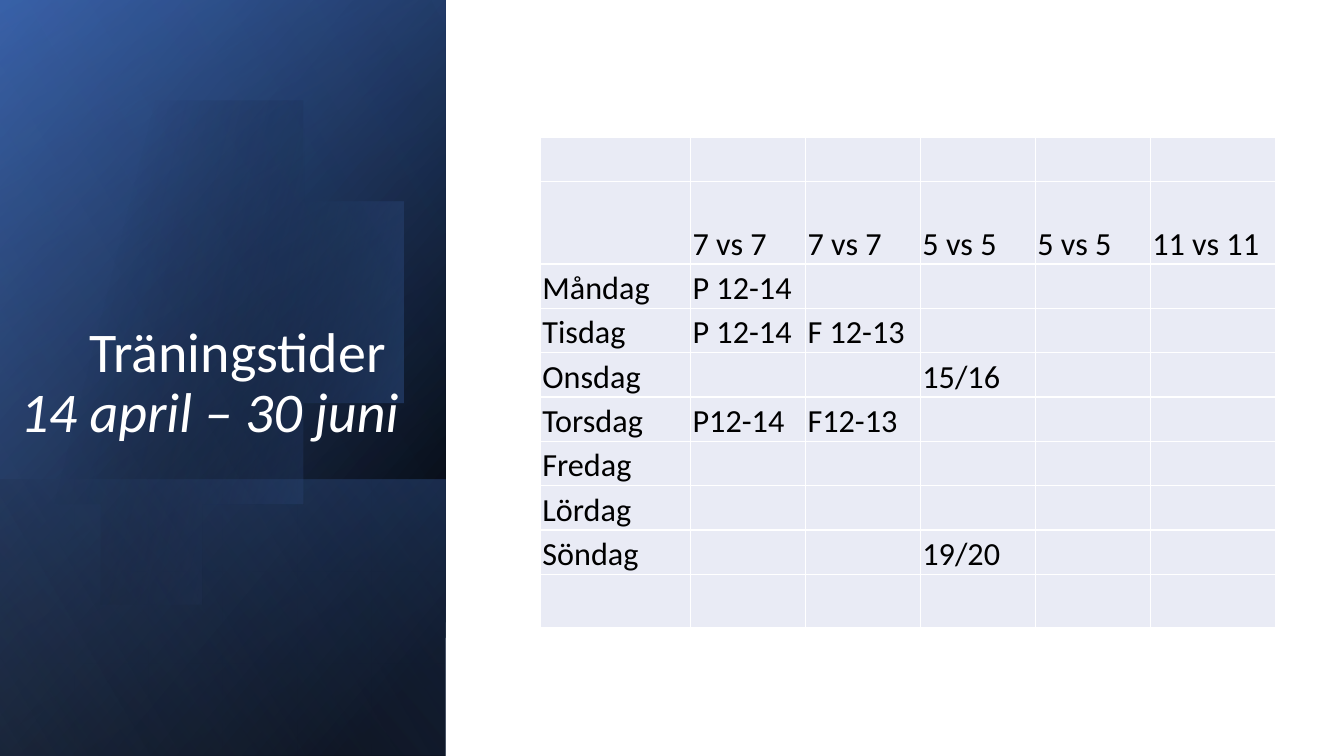
import math
from dataclasses import dataclass

from lxml import etree
from pptx import Presentation
from pptx import util as u
from pptx.dml.color import RGBColor
from pptx.enum import shapes, text
from pptx.oxml.ns import qn

SLIDE_W, SLIDE_H = 13.33, 7.5
PANEL_W = 4.42
FONT = "Calibri"
WHITE, BLACK, CELL_FILL = "FFFFFF", "000000", "E9EBF5"

TABLE_LEFT, TABLE_TOP = 5.36, 1.36
COLUMNS = [1.49] + [1.14] * 4 + [1.24]
ROWS = [0.44, 0.82] + [0.44] * 7 + [0.53]
SCHEDULE = [
    [],
    ["", "7 vs 7", "7 vs 7", "5 vs 5", "5 vs 5", "11 vs 11"],
    ["Måndag", "P 12-14"],
    ["Tisdag", "P 12-14", "F 12-13"],
    ["Onsdag", "", "", "15/16"],
    ["Torsdag", "P12-14", "F12-13"],
    ["Fredag"],
    ["Lördag"],
    ["Söndag", "", "", "19/20"],
    [],
]


@dataclass
class Stop:
    position: int
    color: str
    opacity: int = 100


@dataclass
class Gradient:
    angle: int
    stops: list[Stop]


@dataclass
class Layer:
    """A full-width layer of the side panel, reaching down to the slide's foot."""
    height: float
    gradient: Gradient


BASE_LAYERS = [
    Layer(SLIDE_H, Gradient(50, [Stop(8, BLACK), Stop(100, "2F5597")])),
    Layer(SLIDE_H, Gradient(30, [Stop(0, BLACK, 0), Stop(99, "4472C4", 46)])),
    Layer(2.74, Gradient(130, [Stop(2, "4472C4", 29), Stop(100, BLACK, 30)])),
]
DISC_GRADIENT = Gradient(14, [Stop(29, BLACK, 0), Stop(100, "4472C4", 43)])
TOP_LAYER = Layer(SLIDE_H, Gradient(120, [Stop(0, BLACK, 0), Stop(99, "8FAADC", 11)]))


def rgb(color: str) -> RGBColor:
    return RGBColor.from_string(color)


def add_color(parent, color: str, opacity: int = 100) -> None:
    clr = etree.SubElement(parent, qn("a:srgbClr"), val=color)
    if opacity < 100:
        etree.SubElement(clr, qn("a:alpha"), val=str(opacity * 1000))


def paint(sp, gradient: Gradient) -> None:
    """Give a shape a linear gradient with opacity, no line and no shadow."""
    sp.shadow.inherit = False
    sp.line.fill.background()
    sp.fill.gradient()
    grad = sp._element.spPr.find(qn("a:gradFill"))
    for child in list(grad):
        grad.remove(child)
    grad.set("rotWithShape", "1")
    stops = etree.SubElement(grad, qn("a:gsLst"))
    for stop in gradient.stops:
        gs = etree.SubElement(stops, qn("a:gs"), pos=str(stop.position * 1000))
        add_color(gs, stop.color, stop.opacity)
    etree.SubElement(grad, qn("a:lin"), ang=str(gradient.angle * 60000), scaled="0")


def add_layer(slide, layer: Layer) -> None:
    """Draw the layer as a mirrored rectangle turned a quarter."""
    center_y = SLIDE_H - layer.height / 2
    sp = slide.shapes.add_shape(
        shapes.MSO_SHAPE.RECTANGLE,
        u.Inches((PANEL_W - layer.height) / 2), u.Inches(center_y - PANEL_W / 2),
        u.Inches(layer.height), u.Inches(PANEL_W))
    sp.rotation = 90
    sp._element.spPr.find(qn("a:xfrm")).set("flipH", "1")
    paint(sp, layer.gradient)


def add_disc(slide) -> None:
    """Draw the large disc, cut straight just past the slide's left edge."""
    center_x, center_y, radius, cut_x = 1.42, 3.39, 2.29, -0.15
    reach = math.acos((cut_x - center_x) / radius)
    steps = 120
    angles = [reach * (2 * i / steps - 1) for i in range(steps + 1)]
    points = [(center_x + radius * math.cos(a), center_y + radius * math.sin(a))
              for a in angles]
    builder = slide.shapes.build_freeform(*points[0], scale=u.Inches(1))
    builder.add_line_segments(points[1:], close=True)
    paint(builder.convert_to_shape(), DISC_GRADIENT)


def format_run(r, size: int, color: str) -> None:
    r.font.name = FONT
    r.font.size = u.Pt(size)
    r.font.color.rgb = rgb(color)


def add_title(slide) -> None:
    box = slide.shapes.add_textbox(0, u.Inches(1.84), u.Inches(4.05), u.Inches(2.62))
    tf = box.text_frame
    tf.word_wrap = True
    tf.vertical_anchor = text.MSO_ANCHOR.BOTTOM
    tf.text = "Träningstider \v14 april – 30 juni"
    p = tf.paragraphs[0]
    p.alignment = text.PP_ALIGN.RIGHT
    p.line_spacing = 0.9
    for r in p.runs:
        format_run(r, 40, WHITE)
    p.runs[-1].font.italic = True


def style_cell(cell) -> None:
    cell.vertical_anchor = text.MSO_ANCHOR.BOTTOM
    cell.margin_left = cell.margin_right = cell.margin_top = u.Inches(0.02)
    cell.margin_bottom = 0
    tc_pr = cell._tc.get_or_add_tcPr()
    for side in ("lnL", "lnR", "lnT", "lnB"):
        ln = etree.SubElement(tc_pr, qn(f"a:{side}"), w=str(u.Pt(1)))
        add_color(etree.SubElement(ln, qn("a:solidFill")), WHITE)
    cell.fill.solid()
    cell.fill.fore_color.rgb = rgb(CELL_FILL)


def add_schedule(slide) -> None:
    frame = slide.shapes.add_table(
        len(ROWS), len(COLUMNS), u.Inches(TABLE_LEFT), u.Inches(TABLE_TOP),
        u.Inches(sum(COLUMNS)), u.Inches(sum(ROWS)))
    table = frame.table
    table.first_row = table.horz_banding = False
    for column, width in zip(table.columns, COLUMNS):
        column.width = u.Inches(width)
    for row, height in zip(table.rows, ROWS):
        row.height = u.Inches(height)
    for cell in table.iter_cells():
        style_cell(cell)
    for i, entries in enumerate(SCHEDULE):
        for j, entry in enumerate(entries):
            if entry:
                tf = table.cell(i, j).text_frame
                tf.text = entry
                format_run(tf.paragraphs[0].runs[0], 23, BLACK)


def main() -> None:
    prs = Presentation()
    prs.slide_width, prs.slide_height = u.Inches(SLIDE_W), u.Inches(SLIDE_H)
    slide = prs.slides.add_slide(prs.slide_layouts[6])
    for layer in BASE_LAYERS:
        add_layer(slide, layer)
    add_disc(slide)
    add_layer(slide, TOP_LAYER)
    add_title(slide)
    add_schedule(slide)
    prs.save("out.pptx")


if __name__ == "__main__":
    main()
